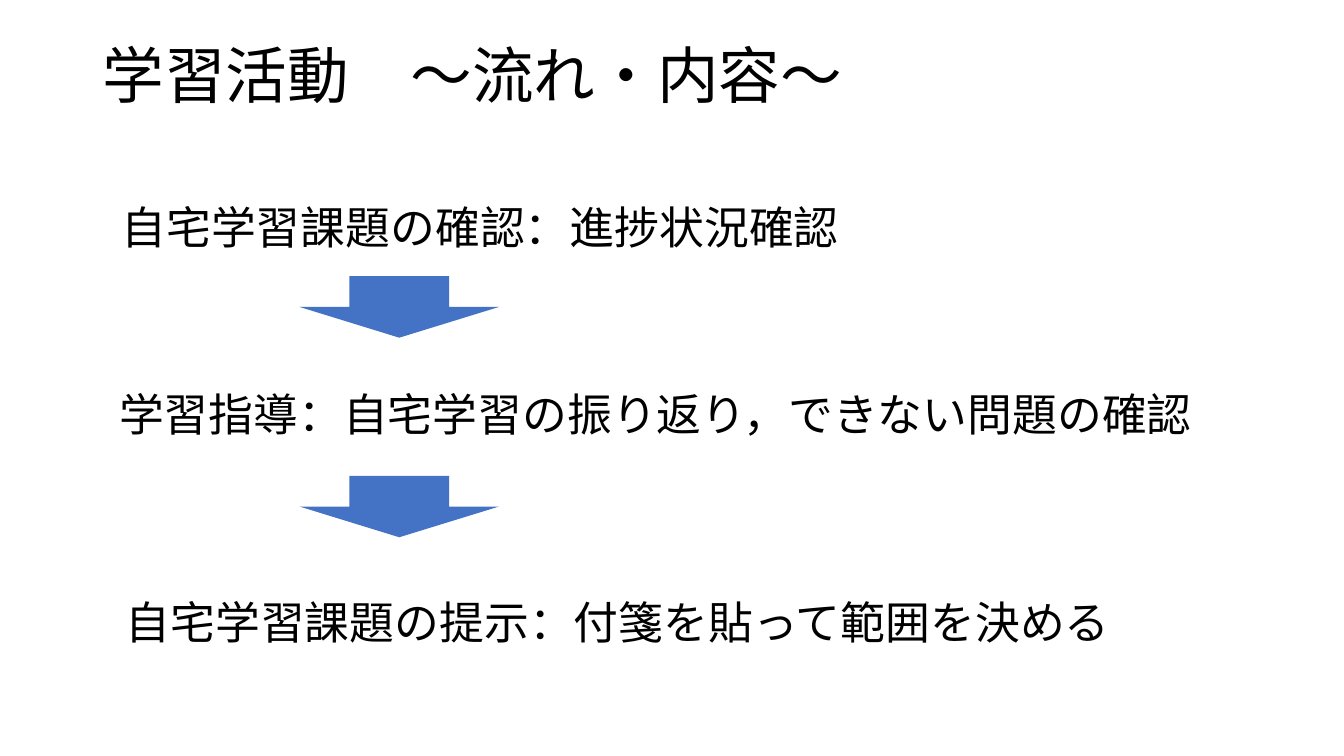
from pptx import Presentation
from pptx.dml.color import RGBColor
from pptx.enum.shapes import MSO_SHAPE
from pptx.enum.text import MSO_ANCHOR, PP_ALIGN
from pptx.util import Inches, Pt

TITLE = ("学習活動　〜流れ・内容〜", (0.92, 0.4, 11.5, 0.99))
STEPS = [
    ("自宅学習課題の確認：進捗状況確認", (0.74, 1.93, 8.05, 1.18)),
    ("学習指導：自宅学習の振り返り，できない問題の確認", (0.74, 3.79, 11.53, 1.18)),
    ("自宅学習課題の提示：付箋を貼って範囲を決める", (0.92, 5.85, 10.42, 1.18)),
]
ARROW = {"left": 2.97, "top": 2.74, "width": 1.98, "height": 0.61, "pitch": 1.98}
THEME = {
    "ink": RGBColor.from_string("000000"),
    "arrow": RGBColor.from_string("4472C4"),
    "title": {"name": "Noto Sans CJK JP", "size": Pt(44)},
    "step": {"name": "Arial", "size": Pt(32)},
}


def write(slide, text, box, style, align, space):
    frame = slide.shapes.add_textbox(*map(Inches, box)).text_frame
    frame.word_wrap = True
    frame.vertical_anchor = MSO_ANCHOR.TOP
    line = frame.paragraphs[0]
    line.alignment = align
    line.line_spacing = space
    run = line.add_run()
    run.text = text
    for key, value in THEME[style].items():
        setattr(run.font, key, value)
    run.font.color.rgb = THEME["ink"]


def point(slide, top):
    box = (ARROW["left"], top, ARROW["width"], ARROW["height"])
    arrow = slide.shapes.add_shape(MSO_SHAPE.DOWN_ARROW, *map(Inches, box))
    arrow.shadow.inherit = False
    arrow.fill.solid()
    arrow.fill.fore_color.rgb = THEME["arrow"]
    arrow.line.fill.background()


def main():
    deck = Presentation()
    deck.slide_width, deck.slide_height = Inches(13.33), Inches(7.5)
    slide = deck.slides.add_slide(deck.slide_layouts[6])
    for text, box in STEPS:
        write(slide, text, box, "step", PP_ALIGN.CENTER, 1.0)
    for step in range(len(STEPS) - 1):
        point(slide, ARROW["top"] + step * ARROW["pitch"])
    write(slide, *TITLE, "title", PP_ALIGN.LEFT, 0.9)
    deck.save("out.pptx")


if __name__ == "__main__":
    main()
